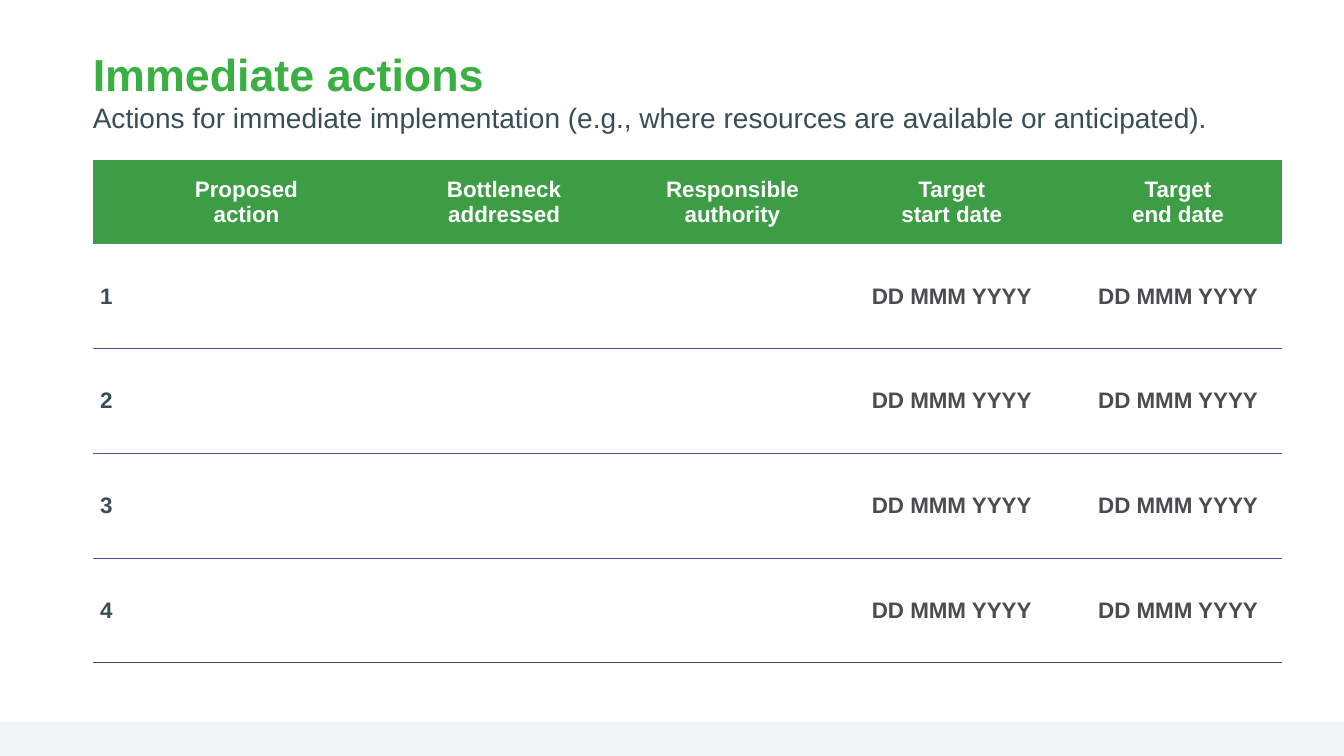
from copy import deepcopy

from lxml.etree import SubElement
from pptx import Presentation
from pptx.dml.color import RGBColor
from pptx.enum.shapes import MSO_SHAPE
from pptx.enum.text import MSO_ANCHOR, PP_ALIGN
from pptx.oxml.ns import qn
from pptx.util import Inches, Pt

COLOURS = {
    "title": "3BB042", "header": "3C9D45", "slate": "384D56", "date": "4B4C4F",
    "rule": "6C4492", "band": "F2F6F7", "white": "FFFFFF",
}
SLIDE_WIDTH, SLIDE_HEIGHT = 13.33, 7.5
LEFT = 0.92
COLUMNS = [0.27, 2.51, 2.6, 1.93, 2.42, 2.07]
ROWS = [0.83, 1.04, 1.04, 1.04, 1.03]
# A vertical tab breaks the line, a newline starts a paragraph
HEADINGS = ["", "Proposed\vaction", "Bottleneck\naddressed",
            "Responsible authority", "Target\vstart date", "Target\vend date"]
DATE = "DD MMM YYYY"


def colour(name):
    return RGBColor.from_string(COLOURS[name])


def apply_format(target, values):
    for attribute, value in values.items():
        setattr(target, attribute, value)


def write_lines(paragraph, lines):
    """Write (text, size, bold, colour) lines into one paragraph."""
    for index, (text, size, bold, tint) in enumerate(lines):
        if index:
            paragraph.add_line_break()
            line_break = paragraph._p.findall(qn("a:br"))[-1]
            line_break.append(deepcopy(paragraph.runs[-1]._r.rPr))
        run = paragraph.add_run()
        run.text = text
        apply_format(run.font, {"name": "Arial", "size": Pt(size), "bold": bold})
        run.font.color.rgb = colour(tint)


def set_borders(cell, top=None, bottom=None):
    properties = cell._tc.get_or_add_tcPr()
    for tag, tint in (("lnL", None), ("lnR", None), ("lnT", top), ("lnB", bottom)):
        line = SubElement(properties, qn(f"a:{tag}"), w=str(Pt(1)))
        if tint:
            fill = SubElement(line, qn("a:solidFill"))
            SubElement(fill, qn("a:srgbClr"), val=COLOURS[tint])
        else:
            SubElement(line, qn("a:noFill"))


def fill_cell(cell, text, tint, side, end):
    apply_format(cell, {
        "vertical_anchor": MSO_ANCHOR.MIDDLE,
        "margin_left": Inches(side), "margin_right": Inches(side),
        "margin_top": Inches(end), "margin_bottom": Inches(end),
    })
    if not text:
        return
    for index, part in enumerate(text.split("\n")):
        frame = cell.text_frame
        paragraph = frame.add_paragraph() if index else frame.paragraphs[0]
        paragraph.alignment = PP_ALIGN.CENTER
        write_lines(paragraph, [(line, 16, True, tint) for line in part.split("\v")])


def add_footer_band(slide):
    height = 0.34
    band = slide.shapes.add_shape(
        MSO_SHAPE.RECTANGLE, 0, Inches(SLIDE_HEIGHT - height),
        Inches(SLIDE_WIDTH), Inches(height))
    band.shadow.inherit = False
    band.fill.solid()
    band.fill.fore_color.rgb = colour("band")
    band.line.fill.background()


def write_title(slide):
    title = slide.shapes.title
    apply_format(title, {"left": Inches(LEFT), "top": Inches(0.4),
                         "width": Inches(11.5), "height": Inches(1.19)})
    frame = title.text_frame
    apply_format(frame, {
        "margin_left": 0, "margin_right": 0, "margin_top": Inches(0.06),
        "margin_bottom": 0, "vertical_anchor": MSO_ANCHOR.TOP, "word_wrap": True,
    })
    heading = frame.paragraphs[0]
    heading.alignment = PP_ALIGN.LEFT
    write_lines(heading, [
        ("Immediate actions", 32, True, "title"),
        ("Actions for immediate implementation (e.g., where resources are "
         "available or anticipated).", 20, False, "slate"),
    ])


def add_action_table(slide):
    actions = slide.shapes.add_table(
        len(ROWS), len(COLUMNS), Inches(LEFT), Inches(1.59),
        Inches(sum(COLUMNS)), Inches(sum(ROWS))).table
    apply_format(actions, {"first_row": False, "horz_banding": False})
    for column, width in zip(actions.columns, COLUMNS):
        column.width = Inches(width)
    for row, height in zip(actions.rows, ROWS):
        row.height = Inches(height)

    # Header row
    for cell, heading in zip(actions.rows[0].cells, HEADINGS):
        set_borders(cell)
        cell.fill.solid()
        cell.fill.fore_color.rgb = colour("header")
        fill_cell(cell, heading, "white", 0.07, 0)

    # Numbered action rows
    last = len(ROWS) - 1
    for number in range(1, len(ROWS)):
        texts = [str(number), "", "", "", DATE, DATE]
        for index, (cell, text) in enumerate(zip(actions.rows[number].cells, texts)):
            set_borders(cell, top="rule" if number > 1 else None,
                        bottom="slate" if number == last else "rule")
            cell.fill.background()
            fill_cell(cell, text, "date" if index else "slate", 0.05, 0.05)


def main():
    deck = Presentation()
    apply_format(deck, {"slide_width": Inches(SLIDE_WIDTH),
                        "slide_height": Inches(SLIDE_HEIGHT)})
    slide = deck.slides.add_slide(deck.slide_layouts.get_by_name("Title Only"))
    add_footer_band(slide)
    write_title(slide)
    add_action_table(slide)
    deck.save("out.pptx")


if __name__ == "__main__":
    main()
